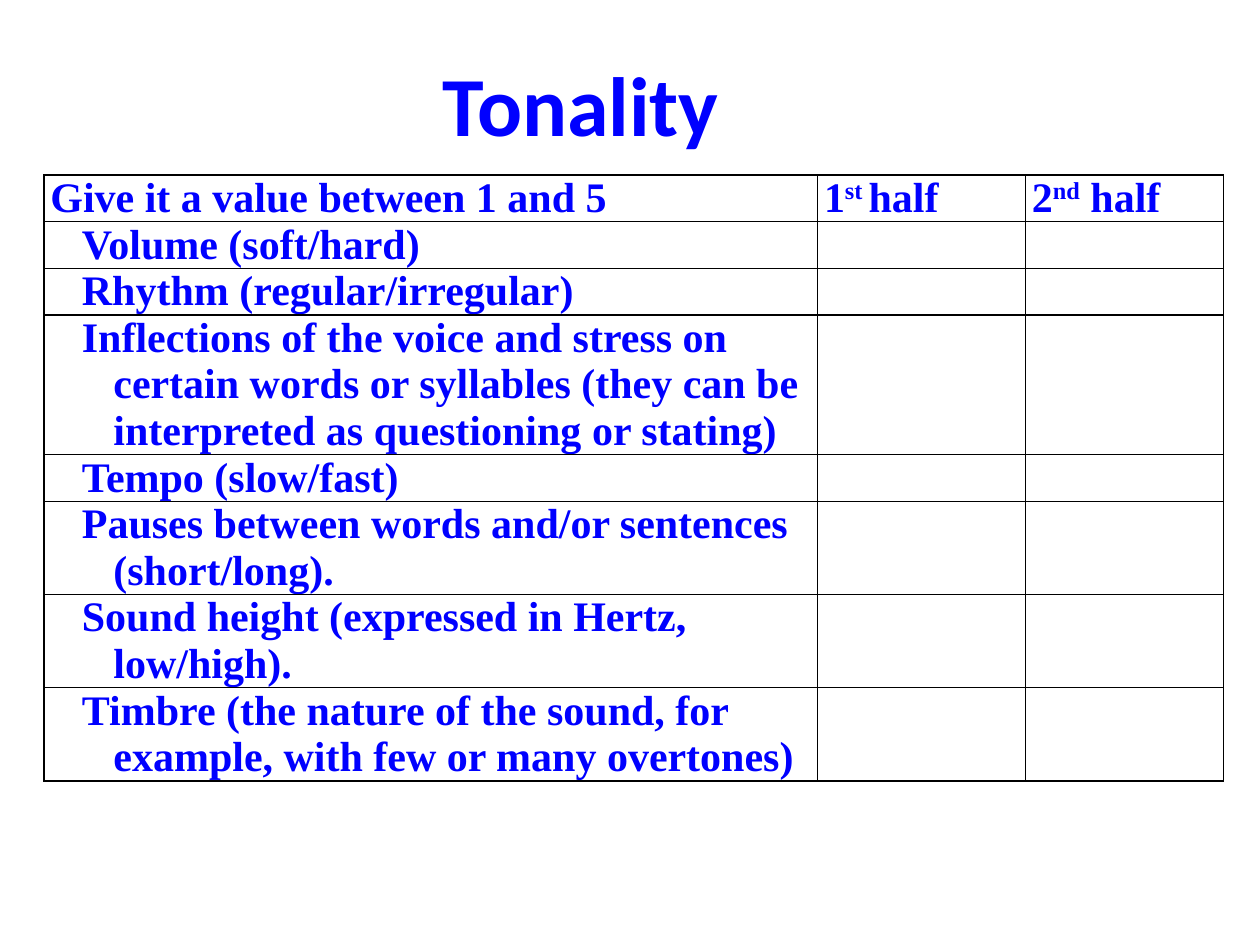
"""Build the Tonality scoring slide."""
import pptx
import pptx.util
import pptx.dml.color
import pptx.enum.text
import pptx.oxml
import pptx.oxml.ns

Inches = pptx.util.Inches
BLUE = "0000FF"


def paint(font, name, size, color):
    font.color.rgb = pptx.dml.color.RGBColor.from_string(color)
    style = {"name": name, "size": pptx.util.Pt(size), "bold": True}
    for key, value in style.items():
        setattr(font, key, value)


def edge(cell, color):
    props = cell._tc.get_or_add_tcPr()
    for side in ("L", "R", "T", "B"):
        props.append(pptx.oxml.parse_xml(
            f'<a:ln{side} {pptx.oxml.ns.nsdecls("a")} w="12700"><a:solidFill>'
            f'<a:srgbClr val="{color}"/></a:solidFill></a:ln{side}>'))


deck = pptx.Presentation()
deck.slide_width, deck.slide_height = Inches(10), Inches(7.5)
slide = deck.slides.add_slide(deck.slide_layouts[5])

title = slide.shapes.title
place = {"left": 0.75, "top": 0.36, "width": 7.72, "height": 0.91}
for key, value in place.items():
    setattr(title, key, Inches(value))
title.text_frame.text = "Tonality"
title.text_frame.vertical_anchor = pptx.enum.text.MSO_ANCHOR.MIDDLE
para = title.text_frame.paragraphs[0]
para.alignment = pptx.enum.text.PP_ALIGN.CENTER
paint(para.runs[0].font, "Calibri", 48, BLUE)

heads = [
    [("Give it a value between 1 and 5", 0)],
    [("1", 0), ("st ", 30000), ("half", 0)],
    [("2", 0), ("nd", 30000), (" half", 0)],
]
traits = [
    ("Volume (soft/hard)", 1),
    ("Rhythm (regular/irregular)", 1),
    ("Inflections of the voice and stress on certain words or syllables "
     "(they can be interpreted as questioning or stating)", 3),
    ("Tempo (slow/fast)", 1),
    ("Pauses between words and/or sentences (short/long).", 2),
    ("Sound height (expressed in Hertz, low/high).", 2),
    ("Timbre (the nature of the sound, for example, "
     "with few or many overtones)", 2),
]
rows = [heads] + [[[(text, 0)], [], []] for text, lines in traits]
counts = [1] + [lines for text, lines in traits]
widths = [6.14, 1.65, 1.57]
line = 0.37

frame = slide.shapes.add_table(
    len(rows), len(widths), Inches(0.35), Inches(1.39),
    Inches(sum(widths)), Inches(line * sum(counts)))
table = frame.table
table.first_row = table.horz_banding = False
for col, width in zip(table.columns, widths):
    col.width = Inches(width)
for row, count in zip(table.rows, counts):
    row.height = Inches(line * count)

pads = {"margin_left": 0.05, "margin_right": 0.05,
        "margin_top": 0, "margin_bottom": 0}
for r, row in enumerate(rows):
    for c, parts in enumerate(row):
        cell = table.cell(r, c)
        for key, value in pads.items():
            setattr(cell, key, Inches(value))
        edge(cell, "000000")
        cell.fill.background()
        para = cell.text_frame.paragraphs[0]
        if r and parts:
            props = para._p.get_or_add_pPr()
            props.set("marL", str(Inches(0.5)))
            props.set("indent", str(Inches(-0.25)))
        for text, base in parts:
            run = para.add_run()
            run.text = text
            paint(run.font, "Times New Roman", 24, BLUE)
            if base:
                run._r.get_or_add_rPr().set("baseline", str(base))

deck.save("out.pptx")
